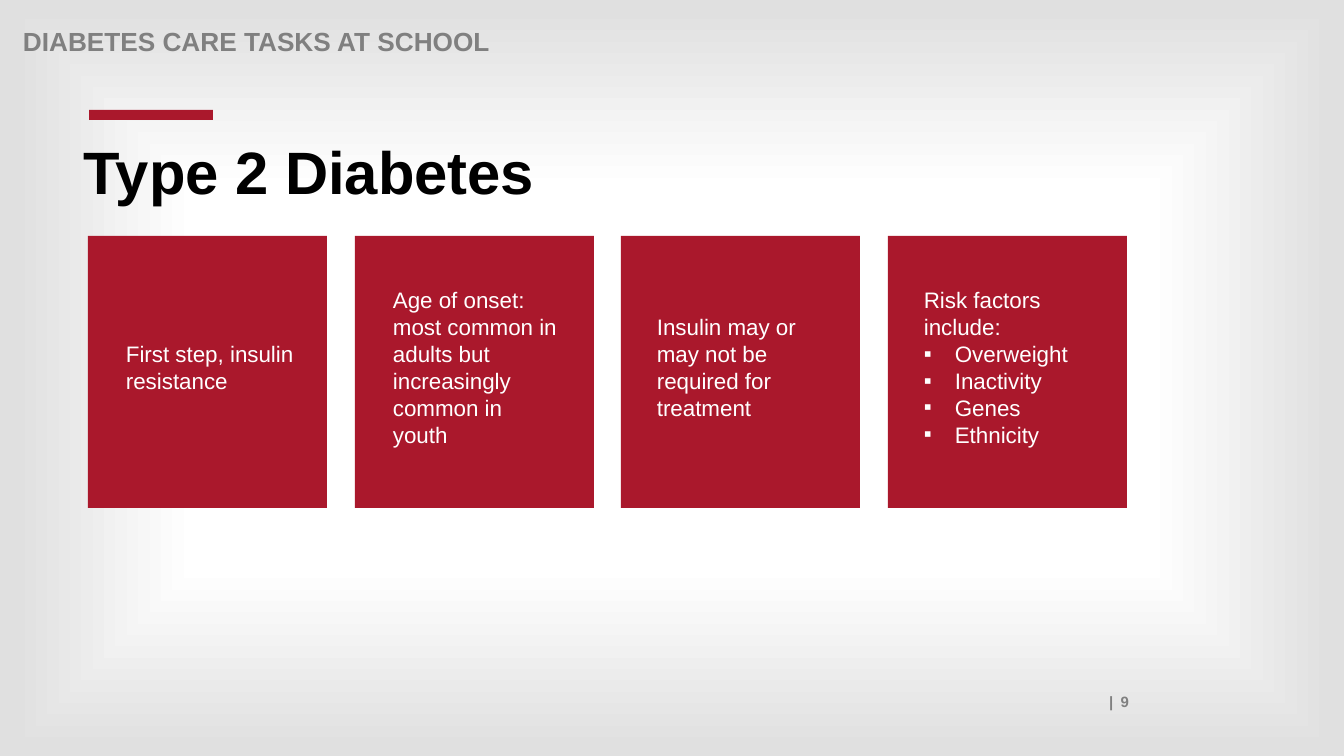
from lxml import etree
from pptx import Presentation, util as u
from pptx.dml.color import RGBColor
from pptx.enum import shapes, text
from pptx.oxml import parse_xml
from pptx.oxml.ns import nsdecls, qn

HEADER = "DIABETES CARE TASKS AT SCHOOL"
TITLE = "Type 2 Diabetes"
PAGE_NUMBER = "| 9"
BULLET = "▪"
# Each card: lead sentence, bulleted items, text offset, text width
CARDS = [
    ("First step, insulin resistance", [], 28, 189),
    ("Age of onset: most common in adults but increasingly common in youth", [], 28, 189),
    ("Insulin may or may not be required for treatment", [], 26, 197),
    ("Risk factors include:", ["Overweight", "Inactivity", "Genes", "Ethnicity"], 26, 197),
]


class Theme:
    font = "Arial"
    red, white, black, gray, edge = "AA182C", "FFFFFF", "000000", "808080", "E0E0E0"
    title, header, card, footer = 42.7, 18.7, 16, 10.7


PAGE_WIDTH, PAGE_HEIGHT = 1344, 756
CARD_LEFT, CARD_TOP, CARD_WIDTH, CARD_HEIGHT = 88, 236, 239, 272
CARD_PITCH = 800 / 3
TEXT_TOP, TEXT_HEIGHT = 280, 174
BULLET_INDENT = 31


def px(value):
    return u.Emu(round(value * 914400 / 100.8))


def add_block(page, left, top, width, height):
    block = page.shapes.add_shape(shapes.MSO_SHAPE.RECTANGLE, *map(px, (left, top, width, height)))
    block.shadow.inherit = False
    block.fill.solid()
    block.fill.fore_color.rgb = RGBColor.from_string(Theme.red)
    block.line.fill.background()


def add_text(page, area, lines, size, color, bold=False):
    box = page.shapes.add_textbox(*map(px, area))
    frame = box.text_frame
    frame.word_wrap = True
    frame.text = "\n".join(lines)
    for para in frame.paragraphs:
        for span in para.runs:
            span.font.name = Theme.font
            span.font.size = u.Pt(size)
            span.font.bold = bold
            span.font.color.rgb = RGBColor.from_string(color)
    return frame


def add_bullet(para):
    props = para._p.get_or_add_pPr()
    props.set("marL", str(px(BULLET_INDENT)))
    props.set("indent", str(-px(BULLET_INDENT)))
    etree.SubElement(props, qn("a:buFont")).set("typeface", Theme.font)
    etree.SubElement(props, qn("a:buChar")).set("char", BULLET)


def paint_background(page):
    """Fill the page with a gradient from a white centre to gray edges."""
    page.background.fill.gradient()
    old = page._element.find(".//" + qn("a:gradFill"))
    stops = "".join(
        f'<a:gs pos="{place * 1000}"><a:srgbClr val="{color}"/></a:gs>'
        for place, color in [(12, Theme.white), (50, Theme.white), (98, Theme.edge)]
    )
    old.getparent().replace(old, parse_xml(
        f'<a:gradFill {nsdecls("a")} rotWithShape="1"><a:gsLst>{stops}</a:gsLst>'
        '<a:path path="shape"><a:fillToRect l="50000" t="50000" r="50000" b="50000"/></a:path>'
        '</a:gradFill>'))


def main():
    deck = Presentation()
    deck.slide_width, deck.slide_height = px(PAGE_WIDTH), px(PAGE_HEIGHT)
    page = deck.slides.add_slide(deck.slide_layouts[6])
    paint_background(page)

    footer = add_text(page, (122, 688, 1017, 28), [PAGE_NUMBER], Theme.footer, Theme.gray, True)
    footer.paragraphs[0].alignment = text.PP_ALIGN.RIGHT
    footer.paragraphs[0].runs[0].font._element.set("spc", "120")

    header = add_text(page, (13, 24, 1109, 28), [HEADER], Theme.header, Theme.gray, True)
    add_block(page, 89, 110, 124, 10)
    title = add_text(page, (74, 138, 1112, 131), [TITLE], Theme.title, Theme.black, True)
    for frame in (header, title):
        frame.paragraphs[0].line_spacing = 0.9

    for index, (lead, items, offset, width) in enumerate(CARDS):
        left = round(CARD_LEFT + index * CARD_PITCH)
        add_block(page, left, CARD_TOP, CARD_WIDTH, CARD_HEIGHT)
        area = (left + offset, TEXT_TOP, width, TEXT_HEIGHT)
        frame = add_text(page, area, [lead, *items], Theme.card, Theme.white)
        frame.vertical_anchor = text.MSO_ANCHOR.MIDDLE
        for para in frame.paragraphs[1:]:
            add_bullet(para)

    deck.save("out.pptx")


if __name__ == "__main__":
    main()
